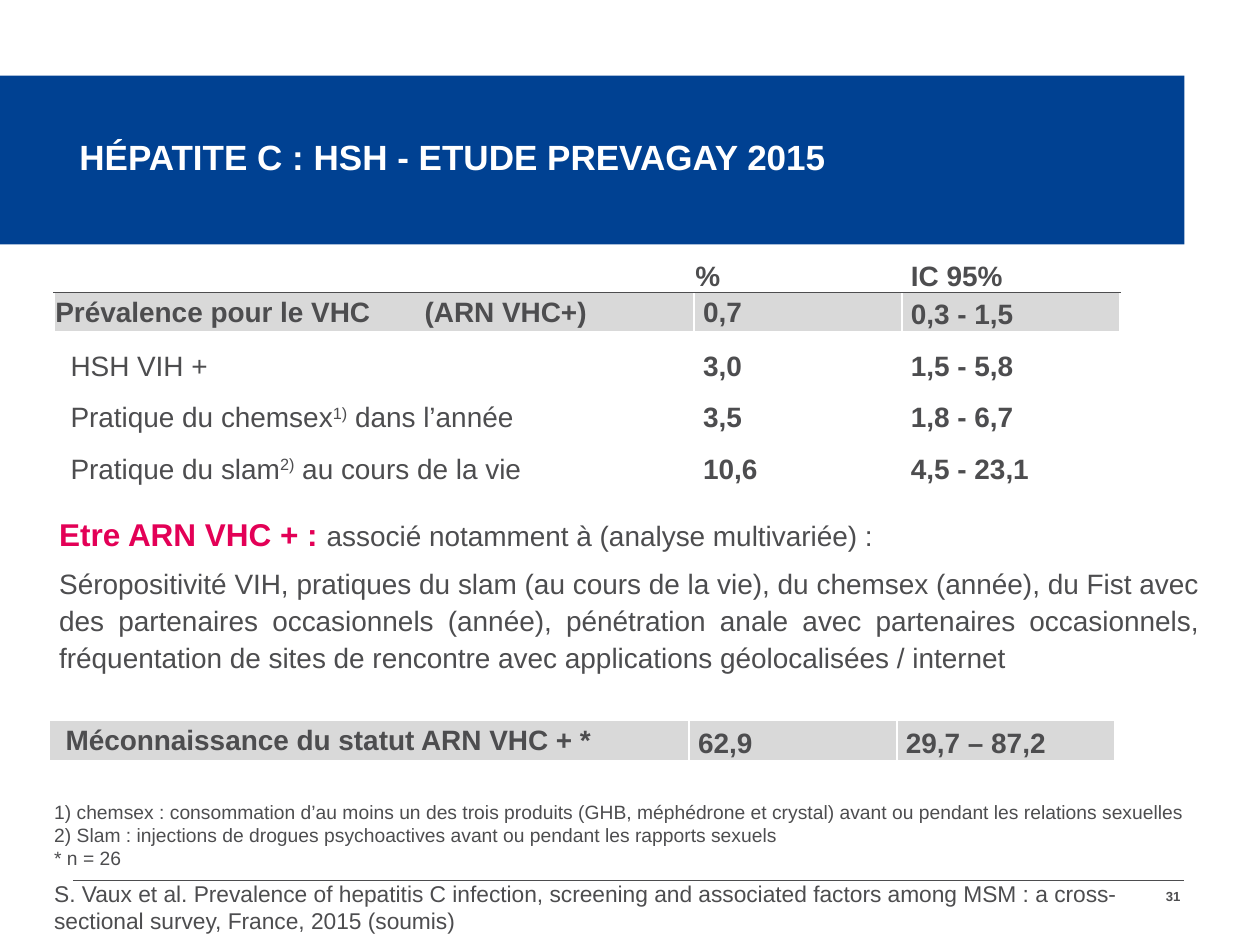
from lxml import etree
from pptx import Presentation
from pptx import util as u
from pptx.dml.color import RGBColor
from pptx.enum import shapes, text
from pptx.oxml import ns

GREY, WHITE, BAND, BLUE, PINK = "4D4D4F", "FFFFFF", "D9D9D9", "004192", "E30056"
COLUMNS = (5.08, 1.65, 1.73)
TIGHT, INDENTED, VALUE = 0.01, 0.13, 0.07


def colour(hex_code):
    """Turn a hex string into a colour."""
    return RGBColor.from_string(hex_code)


def add_run(paragraph, words, size, hex_code=GREY, bold=False, raised=False):
    """Append one formatted run."""
    run = paragraph.add_run()
    run.text = words
    run.font.name = "Arial"
    run.font.size = u.Pt(size)
    run.font.bold = bold
    run.font.color.rgb = colour(hex_code)
    if raised:
        run.font._element.set("baseline", "30000")


def add_block(slide, place, paragraphs, anchor=text.MSO_ANCHOR.TOP, wrap=True):
    """Add a text box; each paragraph is a list of run arguments."""
    frame = slide.shapes.add_textbox(*map(u.Inches, place)).text_frame
    frame.word_wrap = wrap
    frame.vertical_anchor = anchor
    frame.margin_left = frame.margin_right = u.Inches(0.04)
    frame.margin_top = frame.margin_bottom = 0
    for index, runs in enumerate(paragraphs):
        paragraph = frame.add_paragraph() if index else frame.paragraphs[0]
        for run in runs:
            add_run(paragraph, *run)
    return frame.paragraphs


def add_banner(slide):
    """Add the blue title band."""
    band = slide.shapes.add_shape(
        shapes.MSO_SHAPE.RECTANGLE, 0, u.Inches(0.6), u.Inches(9.4), u.Inches(1.34))
    band.shadow.inherit = False
    band.fill.solid()
    band.fill.fore_color.rgb = colour(BLUE)
    band.line.fill.background()


def add_rule(slide):
    """Add the thin footer line."""
    rule = slide.shapes.add_connector(
        shapes.MSO_CONNECTOR.STRAIGHT, *map(u.Inches, (0.58, 6.99, 9.4, 6.99)))
    rule.line.color.rgb = colour(GREY)
    rule.line.width = u.Pt(0.75)
    etree.SubElement(rule._element.spPr, ns.qn("a:effectLst"))


def set_borders(cell, top, bottom):
    """Draw the four cell edges, white at the sides."""
    properties = cell._tc.get_or_add_tcPr()
    edges = (("L", WHITE), ("R", WHITE), ("T", top), ("B", bottom))
    for index, (side, hex_code) in enumerate(edges):
        line = etree.Element(ns.qn(f"a:ln{side}"), w=str(u.Pt(1)))
        fill = etree.SubElement(line, ns.qn("a:solidFill"))
        etree.SubElement(fill, ns.qn("a:srgbClr"), val=hex_code)
        properties.insert(index, line)


def fill_cell(cell, runs, indent, spacing, anchor, fill):
    """Write one table cell."""
    cell.margin_left = u.Inches(indent)
    cell.margin_right = cell.margin_top = u.Inches(0.01)
    cell.margin_bottom = 0
    cell.vertical_anchor = anchor
    paragraph = cell.text_frame.paragraphs[0]
    paragraph.font.size = u.Pt(16)
    paragraph.line_spacing = spacing
    for words, bold, raised in runs:
        add_run(paragraph, words, 16, GREY, bold, raised)
    if fill:
        cell.fill.solid()
        cell.fill.fore_color.rgb = colour(fill)
    else:
        cell.fill.background()


def add_table(slide, left, top, heights):
    """Add an unbanded three-column table."""
    table = slide.shapes.add_table(
        len(heights), len(COLUMNS), u.Inches(left), u.Inches(top),
        u.Inches(sum(COLUMNS)), u.Inches(sum(heights))).table
    table.first_row = table.horz_banding = False
    for column, width in zip(table.columns, COLUMNS):
        column.width = u.Inches(width)
    for row, height in zip(table.rows, heights):
        row.height = u.Inches(height)
    return table


def bold(words):
    """Give the runs of an all-bold cell."""
    return [(words, True, False)]


def practice(before, mark, after):
    """Give the runs of a label with a raised note mark."""
    return [(before, False, False), (mark, False, True), (after, False, False)]


def add_prevalence(slide):
    """Add the prevalence table."""
    middle, bottom = text.MSO_ANCHOR.MIDDLE, text.MSO_ANCHOR.BOTTOM
    table = add_table(slide, 0.43, 2.02, (0.3, 0.3, 0.38, 0.38, 0.38))
    header = (([], TIGHT), (bold("%"), TIGHT), (bold("IC 95%"), VALUE))
    for column, (runs, indent) in enumerate(header):
        fill_cell(table.cell(0, column), runs, indent, 1.0, bottom, WHITE)
    overall = ((bold("Prévalence pour le VHC\t(ARN VHC+)"), TIGHT, 1.0),
               (bold("0,7"), VALUE, 1.0), (bold("0,3 - 1,5"), VALUE, 1.15))
    for column, (runs, indent, spacing) in enumerate(overall):
        fill_cell(table.cell(1, column), runs, indent, spacing, middle, BAND)
    label = table.cell(1, 0).text_frame.paragraphs[0]._p.get_or_add_pPr()
    tabs = etree.Element(ns.qn("a:tabLst"))
    etree.SubElement(tabs, ns.qn("a:tab"), pos=str(u.Inches(2.93)), algn="l")
    label.find(ns.qn("a:defRPr")).addprevious(tabs)
    groups = (
        ([("HSH VIH +", False, False)], "3,0", "1,5 - 5,8"),
        (practice("Pratique du chemsex", "1)", " dans l’année"), "3,5", "1,8 - 6,7"),
        (practice("Pratique du slam", "2)", " au cours de la vie"), "10,6", "4,5 - 23,1"),
    )
    for row, (group, percent, interval) in enumerate(groups, 2):
        fill_cell(table.cell(row, 0), group, INDENTED, 1.5, middle, None)
        for column, value in enumerate((percent, interval), 1):
            fill_cell(table.cell(row, column), bold(value), VALUE, 1.5, middle, None)
    for row in range(len(table.rows)):
        for column in range(len(COLUMNS)):
            set_borders(table.cell(row, column), GREY if row == 1 else WHITE,
                        GREY if row == 0 else WHITE)


def add_unawareness(slide):
    """Add the one-row table on unknown status."""
    table = add_table(slide, 0.39, 5.72, (0.3,))
    cells = (("Méconnaissance du statut ARN VHC + *", INDENTED, 1.0),
             ("62,9", VALUE, 1.15), ("29,7 – 87,2", VALUE, 1.15))
    for column, (words, indent, spacing) in enumerate(cells):
        cell = table.cell(0, column)
        fill_cell(cell, bold(words), indent, spacing, text.MSO_ANCHOR.MIDDLE, BAND)
        set_borders(cell, WHITE, WHITE)


def add_factors(slide):
    """Add the paragraph on associated factors."""
    heading, factors = add_block(slide, (0.43, 4.06, 9.13, 1.42), [
        [("Etre ARN VHC + : ", 18, PINK, True),
         ("associé notamment à (analyse multivariée) :", 16)],
        [("Séropositivité VIH, pratiques du slam (au cours de la vie), du chemsex "
          "(année), du Fist avec des partenaires occasionnels (année), pénétration "
          "anale avec partenaires occasionnels, fréquentation de sites de rencontre "
          "avec applications géolocalisées / internet", 16)]])
    heading.line_spacing = factors.line_spacing = 1.1
    factors.space_before = u.Pt(6)
    factors.alignment = text.PP_ALIGN.JUSTIFY


def main():
    """Build and save the slide."""
    deck = Presentation()
    deck.slide_width, deck.slide_height = u.Inches(10), u.Inches(7.5)
    slide = deck.slides.add_slide(deck.slide_layouts[6])
    add_banner(slide)
    add_rule(slide)
    number = add_block(slide, (9.14, 7.05, 0.27, 0.13),
                       [[("31", 7.5, GREY, True)]], wrap=False)
    number[0].alignment = text.PP_ALIGN.RIGHT
    add_block(slide, (0.59, 0.62, 7.17, 1.25),
              [[("HÉPATITE C : HSH - ETUDE PREVAGAY 2015", 20, WHITE, True)]],
              text.MSO_ANCHOR.MIDDLE)
    add_prevalence(slide)
    add_factors(slide)
    notes = ("1) chemsex : consommation d’au moins un des trois produits (GHB, "
             "méphédrone et crystal) avant ou pendant les relations sexuelles",
             "2) Slam : injections de drogues psychoactives avant ou pendant les "
             "rapports sexuels", "* n = 26")
    add_block(slide, (0.39, 6.35, 9.17, 0.56), [[(note, 11)] for note in notes])
    add_block(slide, (0.39, 6.98, 8.63, 0.44), [[(
        "S. Vaux et al. Prevalence of hepatitis C infection, screening and associated "
        "factors among MSM : a cross-sectional survey, France, 2015 (soumis)", 13)]])
    add_unawareness(slide)
    deck.save("out.pptx")


if __name__ == "__main__":
    main()
